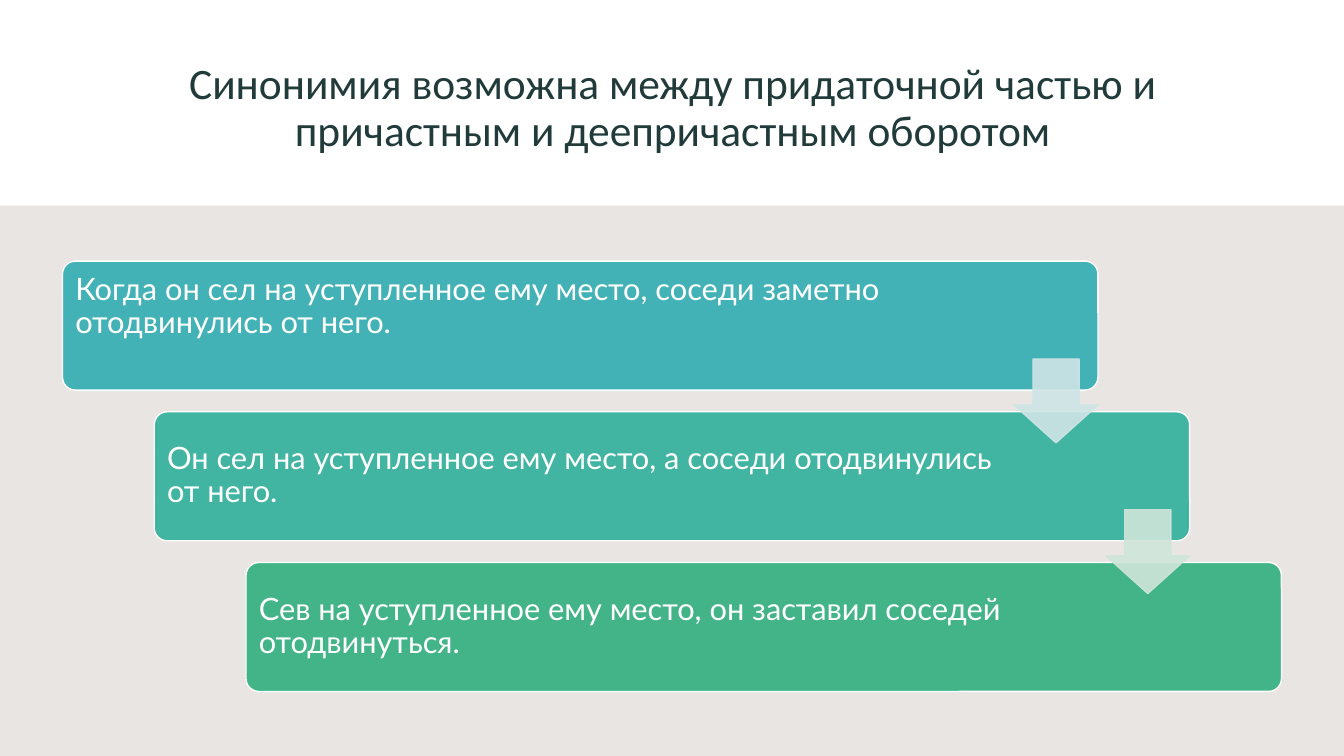
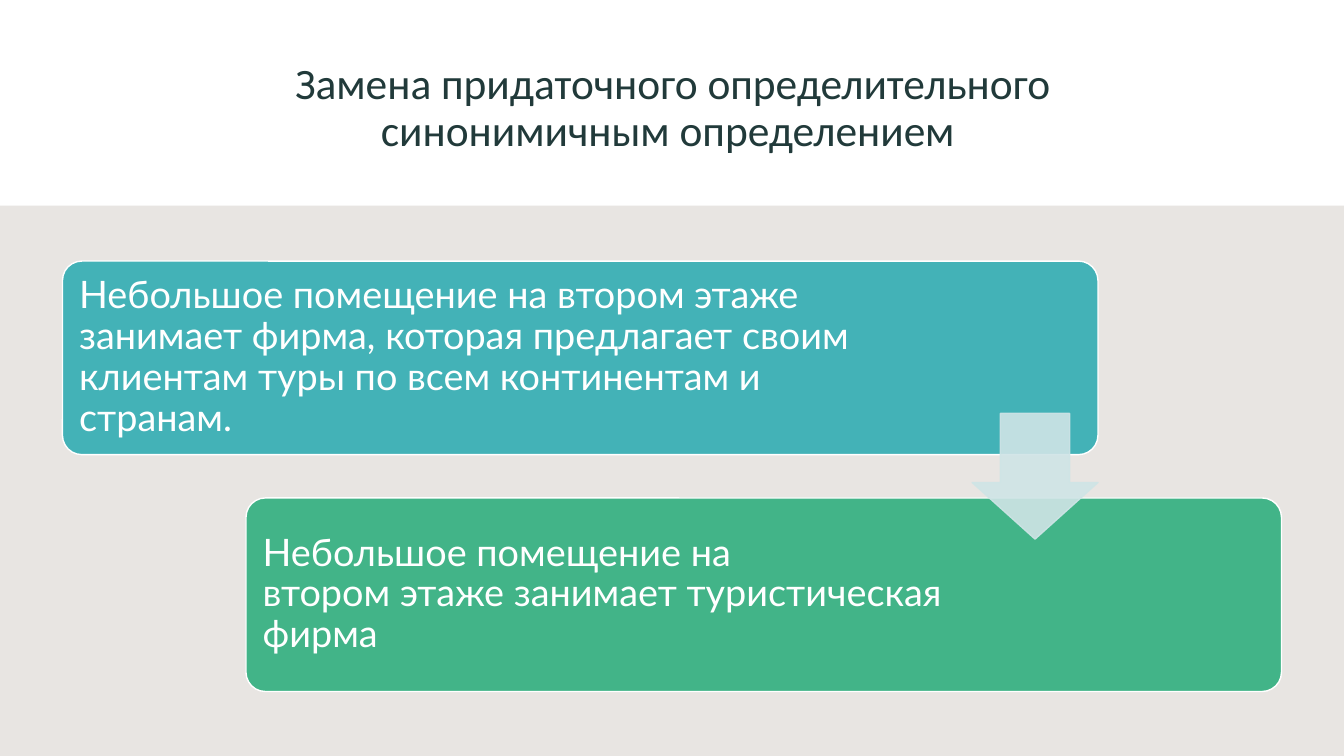
from lxml import etree
from pptx import Presentation
from pptx.dml.color import RGBColor
from pptx.enum import shapes, text
from pptx.oxml import ns
from pptx.util import Inches, Pt

WHITE = RGBColor(0xFF, 0xFF, 0xFF)
INK = RGBColor(0x21, 0x3A, 0x3A)
PANEL = RGBColor(0xE8, 0xE5, 0xE2)
BLUE = RGBColor(0x43, 0xB2, 0xB7)
TEAL = RGBColor(0x42, 0xB5, 0xA2)
GREEN = RGBColor(0x42, 0xB4, 0x88)
PALE_BLUE = RGBColor(0xCF, 0xE4, 0xE6)
PALE_GREEN = RGBColor(0xCF, 0xE5, 0xDA)
ARROW_COLORS = (PALE_BLUE, PALE_GREEN)

TITLE_FONT, TITLE_SIZE = "Calibri", 31
CARD_FONT = "Lato"
NBSP = chr(160)

SLIDE_WIDTH, SLIDE_HEIGHT = 13.33, 7.5
PANEL_TOP = 2.04
STAIR_LEFT, STAIR_RIGHT = 0.62, 12.71
STAIR_TOP, STAIR_BOTTOM = 2.59, 6.86
CARD_WIDTH = 10.27
ARROW_RATIO = 0.65


def add_block(page, kind, left, top, width, height, fill, line=None):
    block = page.shapes.add_shape(
        kind, Inches(left), Inches(top), Inches(width), Inches(height))
    block.shadow.inherit = False
    block.fill.solid()
    block.fill.fore_color.rgb = fill
    if line is None:
        block.line.fill.background()
    else:
        block.line.color.rgb = line
        block.line.width = Pt(1)
    return block


def add_page(deck, title):
    """Add a slide with the centred title above the grey panel."""
    page = deck.slides.add_slide(deck.slide_layouts[5])
    box = page.shapes.title
    box.left, box.top = Inches(1.56), Inches(0.54)
    box.width, box.height = Inches(10.22), Inches(1.09)
    frame = box.text_frame
    frame.text = title
    frame.word_wrap = True
    frame.auto_size = text.MSO_AUTO_SIZE.NONE
    frame.vertical_anchor = text.MSO_ANCHOR.MIDDLE
    para = frame.paragraphs[0]
    para.alignment = text.PP_ALIGN.CENTER
    para.line_spacing = 0.9
    para.font.name = TITLE_FONT
    para.font.size = Pt(TITLE_SIZE)
    para.font.color.rgb = INK
    add_block(page, shapes.MSO_SHAPE.RECTANGLE, 0, PANEL_TOP,
              SLIDE_WIDTH, SLIDE_HEIGHT - PANEL_TOP, PANEL)
    return page


def add_card(page, left, top, height, wording, color, right_inset, inset,
             size, anchor=text.MSO_ANCHOR.MIDDLE):
    card = add_block(page, shapes.MSO_SHAPE.ROUNDED_RECTANGLE,
                     left, top, CARD_WIDTH, height, color, WHITE)
    card.adjustments[0] = 0.1
    frame = card.text_frame
    frame.text = wording
    frame.word_wrap = True
    frame.vertical_anchor = anchor
    frame.margin_left = frame.margin_top = frame.margin_bottom = Inches(inset)
    frame.margin_right = Inches(right_inset)
    para = frame.paragraphs[0]
    para.alignment = text.PP_ALIGN.LEFT
    para.line_spacing = 0.9
    para.font.name = CARD_FONT
    para.font.size = Pt(size)
    para.font.color.rgb = WHITE


def add_arrow(page, left, top, size, color):
    """Add a slightly see-through arrow that points down."""
    arrow = add_block(page, shapes.MSO_SHAPE.DOWN_ARROW,
                      left, top, size, size, color, color)
    arrow.adjustments[0] = 0.55
    arrow.adjustments[1] = 0.45
    for tint in arrow.element.spPr.iter(ns.qn("a:srgbClr")):
        etree.SubElement(tint, ns.qn("a:alpha"), val="90000")


def add_staircase(page, cards, height, inset, size):
    """Step the cards down to the right, with an arrow across each gap."""
    steps = len(cards) - 1
    step_x = (STAIR_RIGHT - STAIR_LEFT - CARD_WIDTH) / steps
    step_y = (STAIR_BOTTOM - STAIR_TOP - height) / steps
    for index, card in enumerate(cards):
        add_card(page, STAIR_LEFT + index * step_x, STAIR_TOP + index * step_y,
                 height, *card, inset=inset, size=size)
    arrow_size = ARROW_RATIO * height
    for index, color in enumerate(ARROW_COLORS[:steps]):
        right = STAIR_LEFT + index * step_x + CARD_WIDTH
        middle = STAIR_TOP + index * step_y + (height + step_y) / 2
        add_arrow(page, right - arrow_size, middle - arrow_size / 2,
                  arrow_size, color)


def add_card_anchored_top(wording, color, right_inset):
    return wording, color, right_inset


def main():
    deck = Presentation()
    deck.slide_width = Inches(SLIDE_WIDTH)
    deck.slide_height = Inches(SLIDE_HEIGHT)

    page = add_page(deck, "Синонимия возможна между придаточной частью и "
                          "причастным и деепричастным оборотом")
    add_staircase(page, [
        ("Когда он сел на уступленное ему место, соседи заметно "
         "отодвинулись от него.", BLUE, 1.4),
        ("Он сел на уступленное ему место, а соседи отодвинулись от него.",
         TEAL, 1.83),
        ("Сев на уступленное ему место, он заставил соседей отодвинуться.",
         GREEN, 1.83),
    ], height=1.28, inset=0.09, size=22)
    first_card = page.shapes[2]
    first_card.text_frame.vertical_anchor = text.MSO_ANCHOR.TOP

    page = add_page(deck, "Замена придаточного определительного "
                          f"синонимичным определением{NBSP}")
    add_staircase(page, [
        (f"Небольшое помещение на втором{NBSP}этаже занимает фирма, "
         f"которая{NBSP}предлагает своим клиентам туры по{NBSP}всем "
         "континентам и странам.", BLUE, 1.98),
        (f"Небольшое помещение на втором{NBSP}этаже занимает "
         "туристическая фирма", GREEN, 3.17),
    ], height=1.92, inset=0.11, size=27)

    deck.save("out.pptx")


if __name__ == "__main__":
    main()
